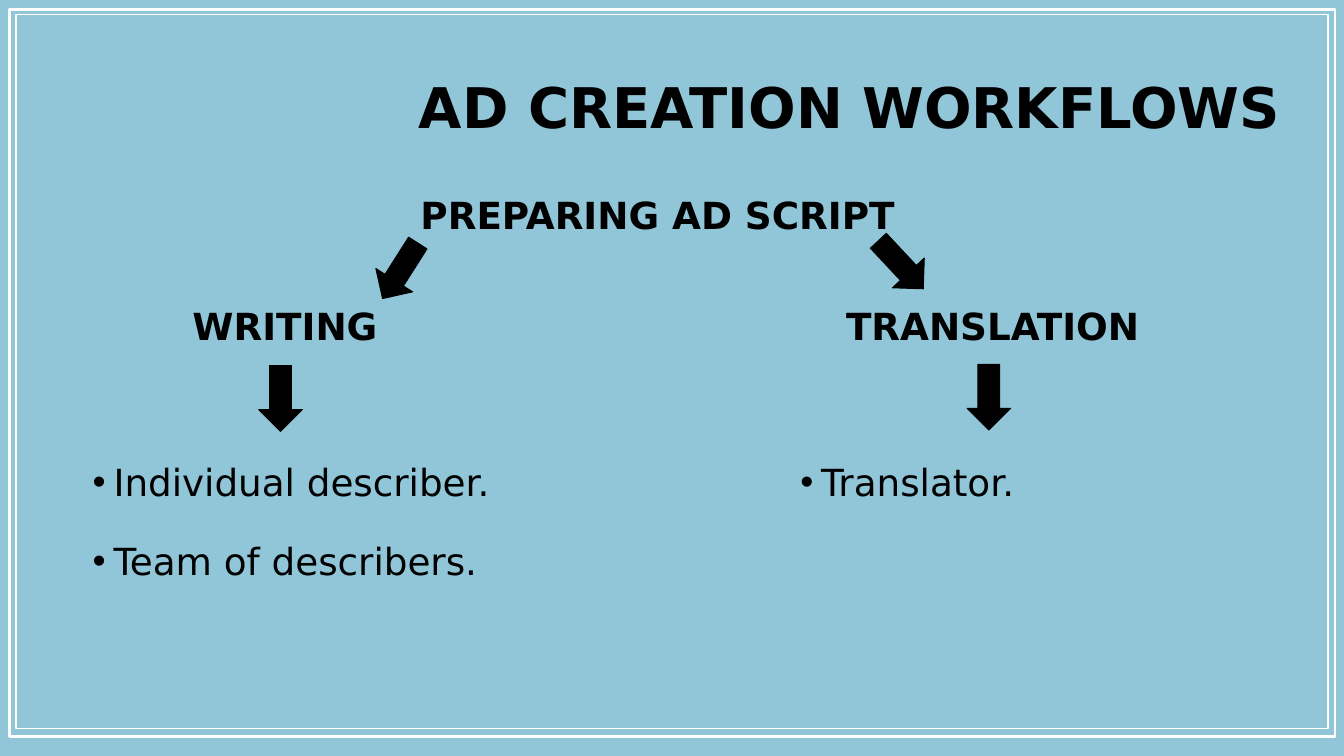
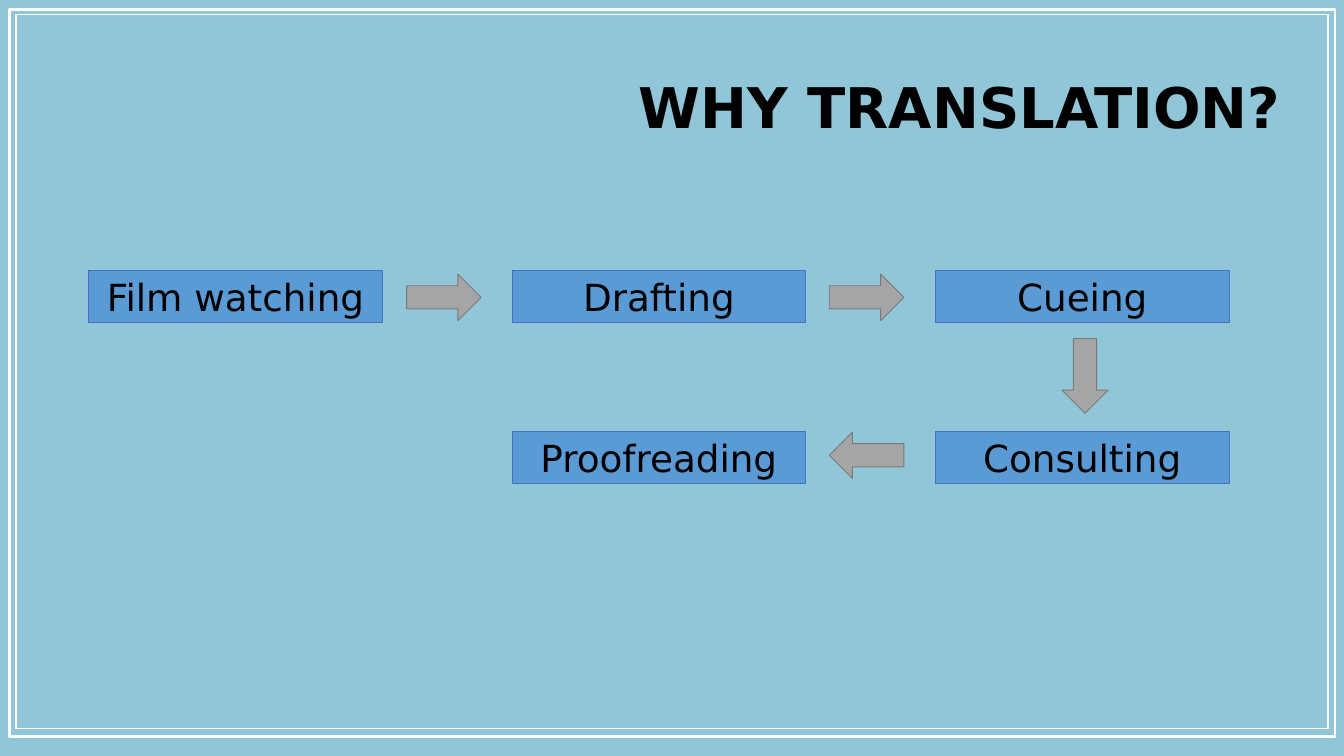
"""Build two slides on audio description workflows and the steps of translating a script."""
import pptx
import pptx.dml.color
import pptx.enum.shapes
import pptx.enum.text
import pptx.oxml.ns
import pptx.util
from lxml import etree

Inches = pptx.util.Inches
Pt = pptx.util.Pt
RGBColor = pptx.dml.color.RGBColor
MSO_SHAPE = pptx.enum.shapes.MSO_SHAPE
PP_ALIGN = pptx.enum.text.PP_ALIGN
MSO_ANCHOR = pptx.enum.text.MSO_ANCHOR
MSO_AUTO_SIZE = pptx.enum.text.MSO_AUTO_SIZE

SKY = RGBColor(0x91, 0xC6, 0xD8)
WHITE = RGBColor(0xFF, 0xFF, 0xFF)
BLACK = RGBColor(0x00, 0x00, 0x00)
STEP_BLUE = RGBColor(0x5B, 0x9B, 0xD5)
STEP_EDGE = RGBColor(0x44, 0x72, 0xC4)
ARROW_GRAY = RGBColor(0xA5, 0xA5, 0xA5)
ARROW_EDGE = RGBColor(0x7A, 0x7A, 0x7A)
FONT = "DejaVu Sans"


def write(frame, *lines, size=40, bold=False, align=PP_ALIGN.CENTER, spacing=None,
          before=0, bullet=None, anchor=None, fit=MSO_AUTO_SIZE.NONE):
    frame.word_wrap = True
    frame.auto_size = fit
    if anchor is not None:
        frame.vertical_anchor = anchor
    for index, line in enumerate(lines):
        paragraph = frame.add_paragraph() if index else frame.paragraphs[0]
        if bullet:
            properties = paragraph._p.get_or_add_pPr()
            properties.set("marL", str(Inches(0.31)))
            properties.set("indent", str(-Inches(0.31)))
            mark = etree.SubElement(properties, pptx.oxml.ns.qn("a:buChar"))
            mark.set("char", bullet)
        paragraph.alignment = align
        paragraph.space_before = Pt(before if index else 0)
        if spacing:
            paragraph.line_spacing = spacing
        run = paragraph.add_run()
        run.text = line
        run.font.name = FONT
        run.font.size = Pt(size)
        run.font.bold = bold
        run.font.color.rgb = BLACK


def add_block(slide, kind, left, top, width, height, line, fill=None, weight=1, rotation=0):
    block = slide.shapes.add_shape(kind, Inches(left), Inches(top), Inches(width), Inches(height))
    block.shadow.inherit = False
    block.rotation = rotation
    if fill is None:
        block.fill.background()
    else:
        block.fill.solid()
        block.fill.fore_color.rgb = fill
    block.line.color.rgb = line
    block.line.width = Pt(weight)
    return block


deck = pptx.Presentation()
deck.slide_width, deck.slide_height = Inches(20), Inches(11.25)
master = deck.slide_master
master.background.fill.solid()
master.background.fill.fore_color.rgb = SKY

workflows = deck.slides.add_slide(deck.slide_layouts[3])
reasons = deck.slides.add_slide(deck.slide_layouts[5])

borders = [(0.14, 0.14, 19.73, 10.82, 2.5), (0.24, 0.22, 19.52, 10.62, 1.5)]
for number, (left, top, width, height, weight) in enumerate(borders):
    border = add_block(workflows, MSO_SHAPE.RECTANGLE, left, top, width, height, WHITE, weight=weight)
    border.element.nvSpPr.cNvPr.set("id", str(100 + number))
    master.element.cSld.spTree.insert(2 + number, border.element)

for slide, heading in [(workflows, "AD CREATION WORKFLOWS"), (reasons, "WHY TRANSLATION?")]:
    title = slide.shapes.title
    title.left, title.top = Inches(2.98), Inches(0.55)
    title.width, title.height = Inches(16.17), Inches(2.17)
    write(title.text_frame, heading, size=60, bold=True, align=PP_ALIGN.RIGHT,
          spacing=0.9, anchor=MSO_ANCHOR.MIDDLE)

workers = [(1, 1.28, ["Individual describer.", "Team of describers."]), (2, 11.81, ["Translator."])]
for index, left, names in workers:
    people = workflows.placeholders[index]
    people.left, people.top = Inches(left), Inches(2.9)
    people.width, people.height = Inches(7.02), Inches(5.48)
    people.text_frame.margin_top = Inches(3.6)
    write(people.text_frame, *names, align=PP_ALIGN.LEFT, spacing=1.5, before=12.3,
          bullet="•", anchor=MSO_ANCHOR.TOP)

stages = [("PREPARING AD SCRIPT", 5.42, 2.81, 8.73),
          ("WRITING", 1.22, 4.47, 6.04),
          ("TRANSLATION", 11.75, 4.46, 6.04)]
for name, left, top, width in stages:
    stage = workflows.shapes.add_textbox(Inches(left), Inches(top), Inches(width), Inches(0.77))
    write(stage.text_frame, name, bold=True, fit=MSO_AUTO_SIZE.SHAPE_TO_FIT_TEXT)

branches = [(3.85, 5.44, 0), (14.39, 5.42, 0), (5.63, 3.54, 32.4), (13.08, 3.45, 316.9)]
for left, top, rotation in branches:
    add_block(workflows, MSO_SHAPE.DOWN_ARROW, left, top, 0.65, 0.98, BLACK, BLACK, rotation=rotation)

column_left, column_pitch = 1.32, 6.3
row_tops = [4.03, 6.42]
steps = [("Film watching", 0, 0), ("Drafting", 1, 0), ("Cueing", 2, 0),
         ("Consulting", 2, 1), ("Proofreading", 1, 1)]
for name, column, row in steps:
    step = add_block(reasons, MSO_SHAPE.RECTANGLE, column_left + column * column_pitch,
                     row_tops[row], 4.37, 0.77, STEP_EDGE, STEP_BLUE)
    write(step.text_frame, name, fit=MSO_AUTO_SIZE.SHAPE_TO_FIT_TEXT)

moves = [(6.05, 4.08, 0), (12.34, 4.08, 0), (15.59, 5.25, 90), (12.34, 6.43, 180)]
for left, top, rotation in moves:
    add_block(reasons, MSO_SHAPE.RIGHT_ARROW, left, top, 1.11, 0.69, ARROW_EDGE, ARROW_GRAY,
              rotation=rotation)

deck.save("out.pptx")
